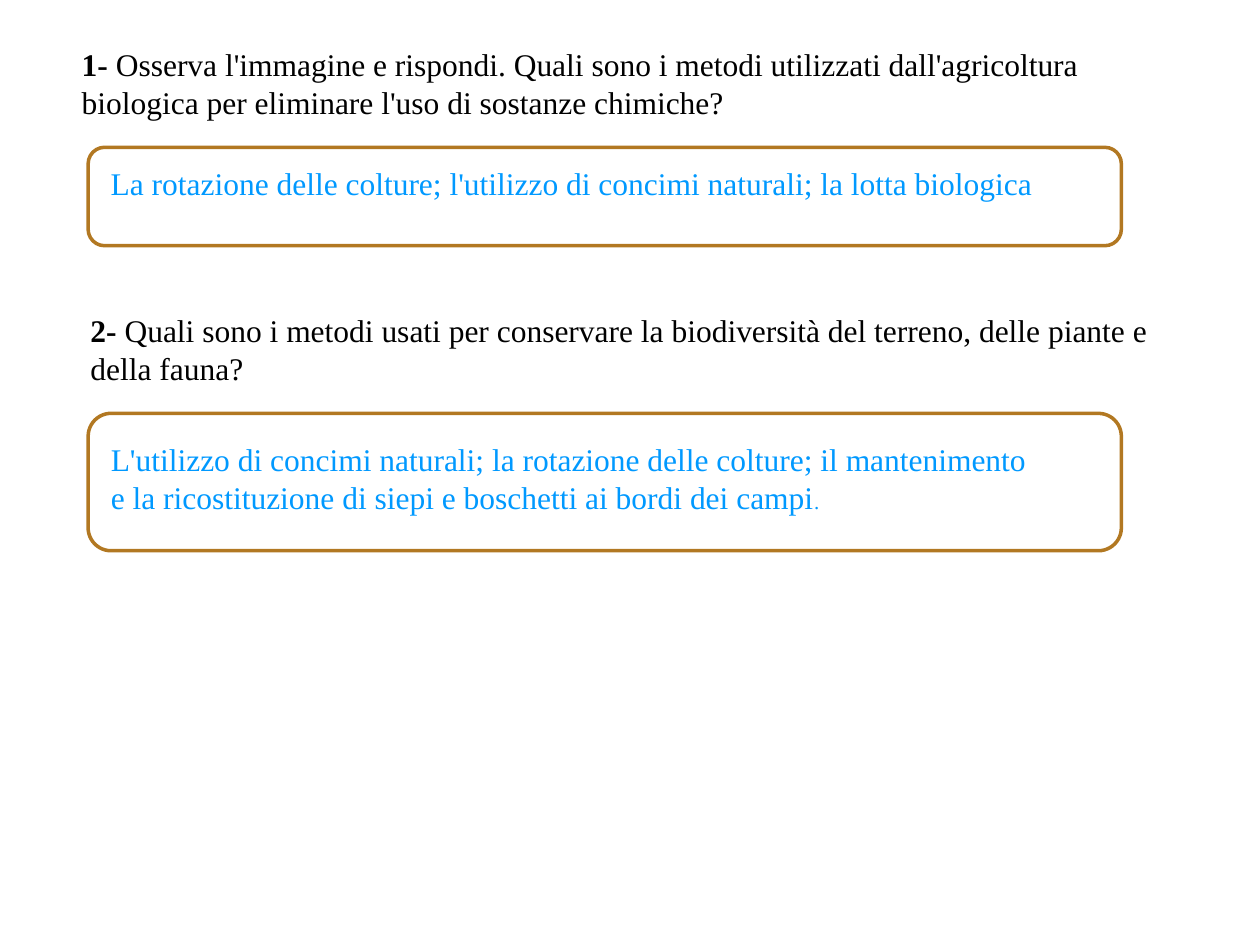
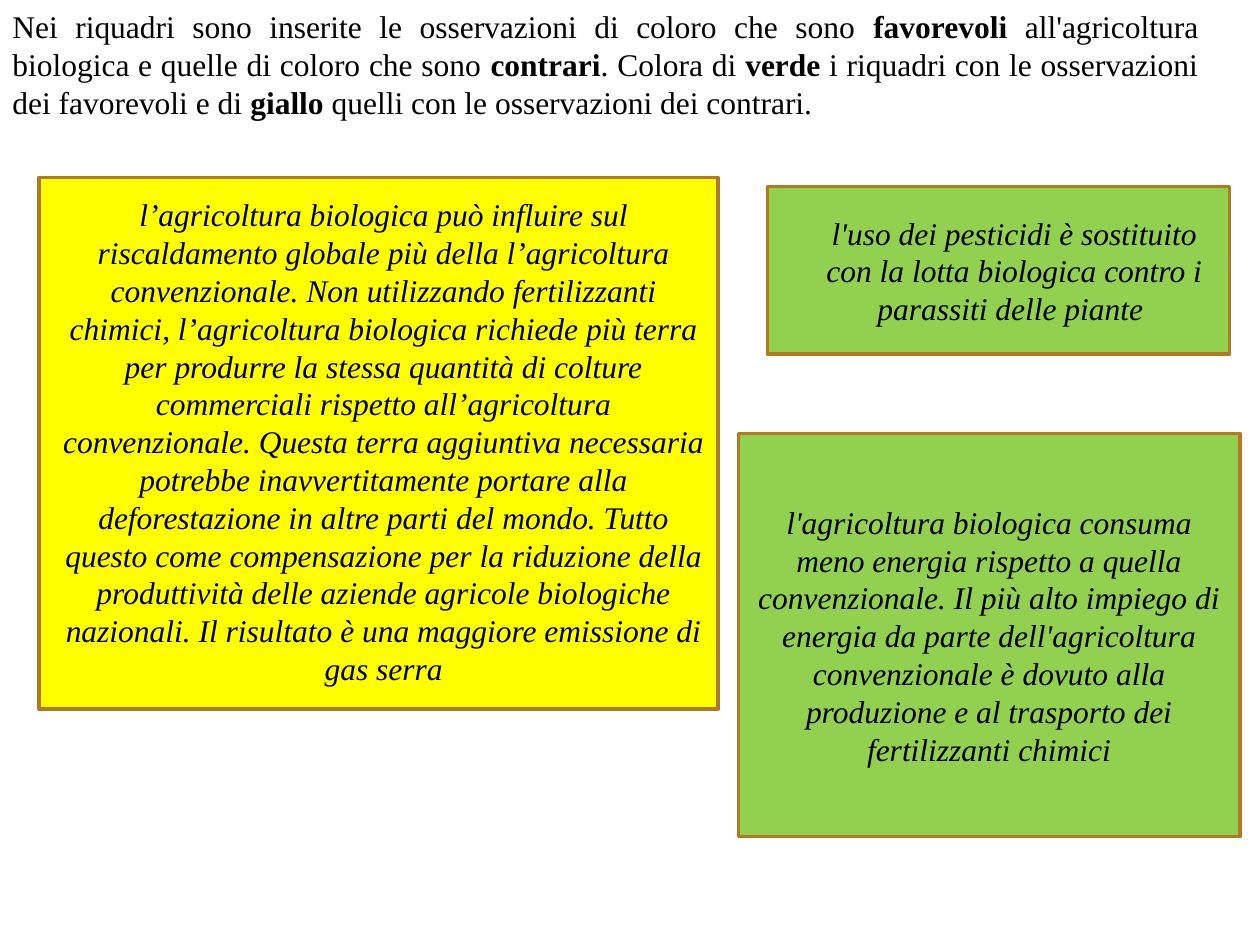
"""Build two worksheet slides about organic farming."""
import pptx
import pptx.util
import pptx.dml.color
import pptx.enum.shapes
import pptx.enum.text

Pt = pptx.util.Pt
ALIGN = pptx.enum.text.PP_ALIGN
ANCHOR = pptx.enum.text.MSO_ANCHOR
SHAPE = pptx.enum.shapes.MSO_SHAPE

FONT = "Times New Roman"
TEXT_SIZE = 18
BORDER_WIDTH = 2
COLORS = {
    "text": "000000",
    "answer": "0099FF",
    "border": "B27822",
    "blank": "FFFFFF",
    "against": "FFFF00",
    "in_favour": "92D050",
}
BOLD = {"bold": True}
ITALIC = {"italic": True}


def rgb(name):
    """Return the named colour."""
    return pptx.dml.color.RGBColor.from_string(COLORS[name])


def write(frame, paras, color="text", align=ALIGN.LEFT, anchor=ANCHOR.MIDDLE, wrap=True):
    """Fill a text frame with paragraphs made of (text, style) spans."""
    frame.word_wrap = wrap
    frame.vertical_anchor = anchor
    for index, spans in enumerate(paras):
        para = frame.add_paragraph() if index else frame.paragraphs[0]
        para.alignment = align
        for text, style in spans:
            span = para.add_run()
            span.text = text
            span.font.name = FONT
            span.font.size = Pt(style.get("size", TEXT_SIZE))
            span.font.bold = style.get("bold", False)
            span.font.italic = style.get("italic", False)
            span.font.color.rgb = rgb(color)


def add_text(slide, place, paras, **layout):
    """Add a text box that grows with its text."""
    box = slide.shapes.add_textbox(*map(Pt, place))
    write(box.text_frame, paras, **layout)
    box.text_frame.auto_size = pptx.enum.text.MSO_AUTO_SIZE.SHAPE_TO_FIT_TEXT


def add_panel(slide, place, fill, kind=SHAPE.RECTANGLE):
    """Add a filled panel with the shared border."""
    panel = slide.shapes.add_shape(kind, *map(Pt, place))
    panel.shadow.inherit = False
    panel.fill.solid()
    panel.fill.fore_color.rgb = rgb(fill)
    panel.line.color.rgb = rgb("border")
    panel.line.width = Pt(BORDER_WIDTH)
    return panel


def add_question(slide, place, number, question):
    """Add a question with its bold number."""
    spans = [(f"{number}- ", BOLD), (question, {})]
    add_text(slide, place, [spans], anchor=ANCHOR.TOP)


def add_answer(slide, top, height, text_place, paras):
    """Add a rounded frame and the answer inside it."""
    add_panel(slide, (50.4, top, 590.4, height), "blank", SHAPE.ROUNDED_RECTANGLE)
    add_text(slide, text_place, paras, color="answer", align=ALIGN.JUSTIFY, wrap=False)


def add_opinion(slide, place, fill, opinion, text_place=None):
    """Add an opinion in a panel, or in a text box over it."""
    panel = add_panel(slide, place, fill)
    paras = [[(opinion, ITALIC)]]
    if text_place:
        add_text(slide, text_place, paras, align=ALIGN.CENTER)
    else:
        write(panel.text_frame, paras, align=ALIGN.CENTER)


def build_questions(slide):
    """Build the slide with two answered questions."""
    add_question(
        slide, (39.6, 22.3, 646.6, 51.1), 1,
        "Osserva l'immagine e rispondi. Quali sono i metodi utilizzati dall'agricoltura "
        "biologica per eliminare l'uso di sostanze chimiche?")
    add_answer(slide, 84.2, 56.2, (56.2, 90, 547.2, 28.8), [
        [("La rotazione delle colture; l'utilizzo di concimi naturali; la lotta biologica", {})],
    ])
    add_question(
        slide, (44.6, 174.2, 641.5, 51.1), 2,
        "Quali sono i metodi usati per conservare la biodiversità del terreno, "
        "delle piante e della fauna?")
    add_answer(slide, 236.2, 78.5, (56.2, 247.7, 543.6, 51.1), [
        [("L'utilizzo di concimi naturali; la rotazione delle colture; il mantenimento", {})],
        [("e la ricostituzione di siepi e boschetti ai bordi dei campi", {}), (". ", {"size": 12})],
    ])


def build_opinions(slide):
    """Build the slide that sorts opinions by colour."""
    instructions = [
        ("Nei riquadri sono inserite le osservazioni di coloro che sono ", {}),
        ("favorevoli ", BOLD),
        ("all'agricoltura biologica e quelle di coloro che sono ", {}),
        ("contrari", BOLD),
        (". Colora di ", {}),
        ("verde", BOLD),
        (" i riquadri con le osservazioni dei favorevoli e di ", {}),
        ("giallo", BOLD),
        (" quelli con le osservazioni dei contrari.", {}),
    ]
    add_text(slide, (0, 0, 691.9, 72.7), [instructions], align=ALIGN.JUSTIFY)
    add_opinion(
        slide, (22.3, 101.5, 388.1, 303.8), "against",
        "l’agricoltura biologica può influire sul riscaldamento globale più della "
        "l’agricoltura convenzionale. Non utilizzando fertilizzanti chimici, "
        "l’agricoltura biologica richiede più terra per produrre la stessa quantità "
        "di colture commerciali rispetto all’agricoltura convenzionale. Questa terra "
        "aggiuntiva necessaria potrebbe inavvertitamente portare alla deforestazione "
        "in altre parti del mondo. Tutto questo come compensazione per la riduzione "
        "della produttività delle aziende agricole biologiche nazionali. Il risultato "
        "è una maggiore emissione di gas serra",
        (28.1, 106.6, 382.3, 290.9))
    add_opinion(
        slide, (438.5, 106.6, 264.2, 95.8), "in_favour",
        "l'uso dei pesticidi è sostituito con la lotta biologica contro i parassiti "
        "delle piante ",
        (461.5, 118.1, 236.2, 72.7))
    add_opinion(
        slide, (421.9, 247.7, 286.6, 230.4), "in_favour",
        "l'agricoltura biologica consuma meno energia rispetto a quella convenzionale. "
        "Il più alto impiego di energia da parte dell'agricoltura convenzionale è dovuto "
        "alla produzione e al trasporto dei fertilizzanti chimici")


def main():
    """Create and save the deck."""
    deck = pptx.Presentation()
    deck.slide_width, deck.slide_height = Pt(720), Pt(540)
    blank_layout = deck.slide_layouts.get_by_name("Blank")
    for build in (build_questions, build_opinions):
        build(deck.slides.add_slide(blank_layout))
    deck.save("out.pptx")


if __name__ == "__main__":
    main()
